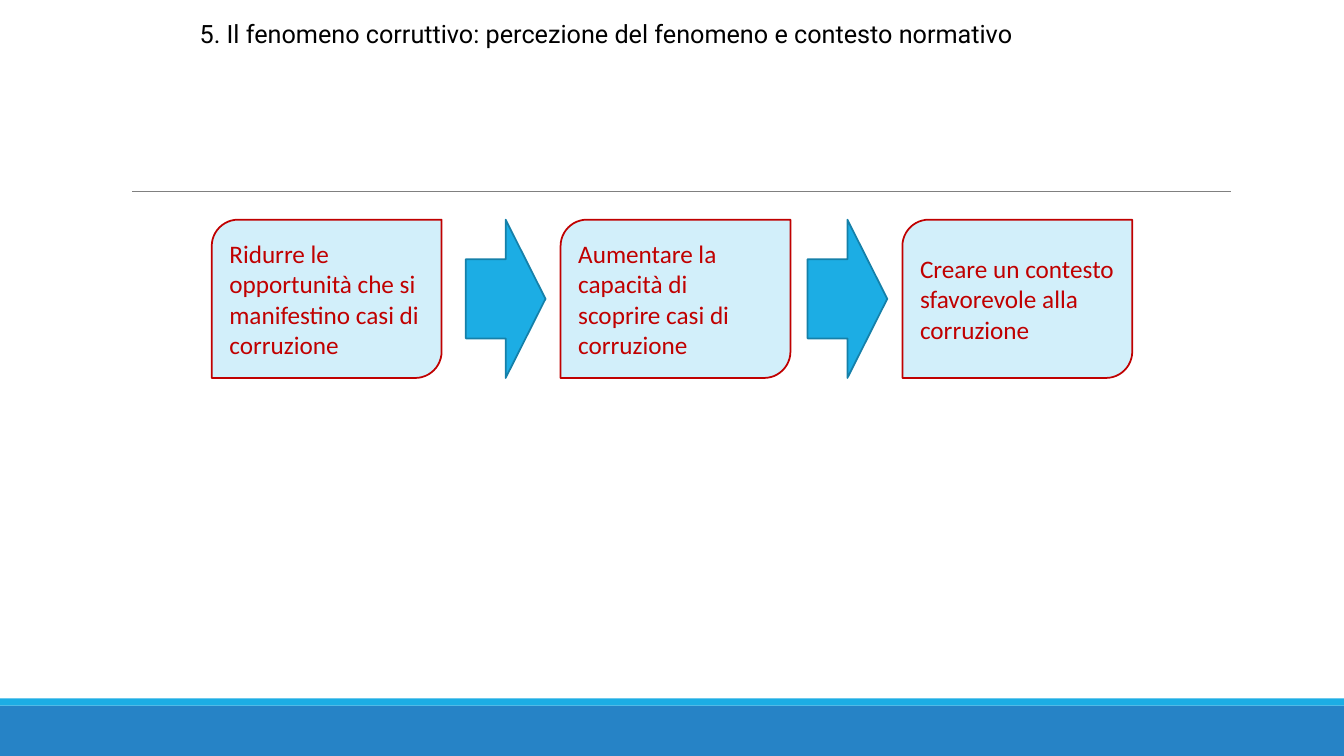
from dataclasses import dataclass

import pptx
import pptx.dml.color
import pptx.enum.shapes
import pptx.enum.text
import pptx.oxml
import pptx.oxml.ns
import pptx.util
from pptx.util import Inches

SHAPES = pptx.enum.shapes.MSO_SHAPE
ANCHOR = pptx.enum.text.MSO_ANCHOR

SKY, BLUE, PALE = "1CADE4", "2683C6", "D2EFFA"
RED, TEAL, GRAY, BLACK = "C00000", "1580A9", "808080", "000000"

ROW_TOP, ROW_HEIGHT = 2.18, 1.57
GOAL_WIDTH, ARROW_WIDTH = 2.28, 0.79
ARROW_GAP = 0.15  # between an arrow and the goal it points to


@dataclass
class Goal:
    left: float
    text: str


GOALS = [
    Goal(2.1, "Ridurre le opportunità che si manifestino casi di corruzione"),
    Goal(5.56, "Aumentare la capacità di scoprire casi di corruzione"),
    Goal(8.95, "Creare un contesto sfavorevole alla corruzione"),
]


def rgb(color: str) -> pptx.dml.color.RGBColor:
    return pptx.dml.color.RGBColor.from_string(color)


def write(shape, text: str, *, font: str, color: str, size: float = 18,
          anchor=ANCHOR.MIDDLE) -> None:
    frame = shape.text_frame
    frame.word_wrap = True
    frame.vertical_anchor = anchor
    frame.text = text
    paragraph = frame.paragraphs[0]
    paragraph.alignment = pptx.enum.text.PP_ALIGN.LEFT
    style = paragraph.runs[0].font
    style.name, style.size = font, pptx.util.Pt(size)
    style.color.rgb = rgb(color)


def add_block(slide, kind, left: float, top: float, width: float,
              height: float, fill: str, outline: str = ""):
    block = slide.shapes.add_shape(
        kind, Inches(left), Inches(top), Inches(width), Inches(height))
    block.shadow.inherit = False
    block.fill.solid()
    block.fill.fore_color.rgb = rgb(fill)
    if outline:
        block.line.color.rgb = rgb(outline)
        block.line.width = pptx.util.Pt(1.25)
    else:
        block.line.fill.background()
    return block


def add_rule(slide, left: float, right: float, y: float) -> None:
    rule = slide.shapes.add_connector(
        pptx.enum.shapes.MSO_CONNECTOR.STRAIGHT,
        Inches(left), Inches(y), Inches(right), Inches(y))
    rule.line.color.rgb = rgb(GRAY)
    rule.line.width = pptx.util.Pt(0.5)
    pptx.oxml.ns.qn("a:effectLst")
    properties = rule.element.spPr
    properties.append(properties.makeelement(pptx.oxml.ns.qn("a:effectLst"), {}))


def main() -> None:
    deck = pptx.Presentation()
    deck.slide_width, deck.slide_height = Inches(13.33), Inches(7.5)
    slide = deck.slides.add_slide(deck.slide_layouts[5])

    # Footer bands and rule
    add_block(slide, SHAPES.RECTANGLE, 0, 7, 13.33, 0.5, BLUE)
    add_block(slide, SHAPES.RECTANGLE, 0, 6.93, 13.33, 0.07, SKY)
    add_rule(slide, 1.31, 12.21, 1.9)

    # Goals, each after the first preceded by an arrow
    for index, goal in enumerate(GOALS):
        box = add_block(slide, SHAPES.ROUND_2_DIAG_RECTANGLE, goal.left,
                        ROW_TOP, GOAL_WIDTH, ROW_HEIGHT, PALE, RED)
        write(box, goal.text, font="Calibri", color=RED)
        if index:
            add_block(slide, SHAPES.RIGHT_ARROW,
                      goal.left - ARROW_GAP - ARROW_WIDTH,
                      ROW_TOP, ARROW_WIDTH, ROW_HEIGHT, SKY, TEAL)

    # Title
    title = slide.shapes.title
    title.left, title.top = Inches(1.88), Inches(0.13)
    title.width, title.height = Inches(9.61), Inches(0.4)
    write(title, "5. Il fenomeno corruttivo: percezione del fenomeno e contesto normativo",
          font="Roboto", color=BLACK, anchor=ANCHOR.TOP)
    title.text_frame.auto_size = pptx.enum.text.MSO_AUTO_SIZE.SHAPE_TO_FIT_TEXT

    deck.save("out.pptx")


if __name__ == "__main__":
    main()
